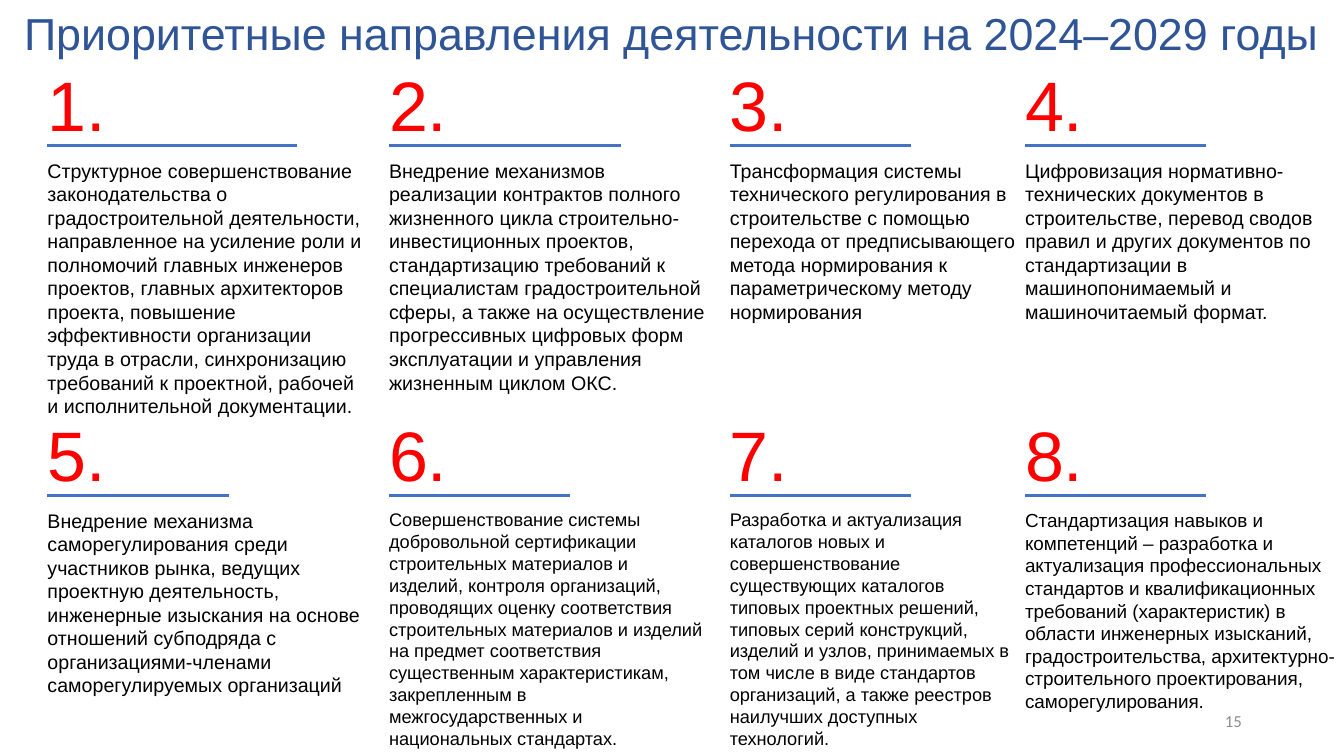
from pptx import Presentation
from pptx.dml.color import RGBColor as RGB
from pptx.enum.shapes import MSO_CONNECTOR as Connector
from pptx.enum.text import MSO_ANCHOR as Anchor, PP_ALIGN as Align
from pptx.oxml.ns import qn
from pptx.util import Pt
from lxml.etree import SubElement
from dataclasses import dataclass

TITLE = "Приоритетные направления деятельности на 2024–2029 годы"
PAGE_NUMBER = "15"
PRIORITIES = [
    {"text": "Структурное совершенствование законодательства о градостроительной деятельности, "
             "направленное на усиление роли и полномочий главных инженеров проектов, главных "
             "архитекторов проекта, повышение эффективности организации труда в отрасли, "
             "синхронизацию требований к проектной, рабочей и исполнительной документации.",
     "rule": 178.5},
    {"text": "Внедрение механизмов реализации контрактов полного жизненного цикла "
             "строительно-инвестиционных проектов, стандартизацию требований к специалистам "
             "градостроительной сферы, а также на осуществление прогрессивных цифровых форм "
             "эксплуатации и управления жизненным циклом ОКС.",
     "rule": 165.5},
    {"text": "Трансформация системы технического регулирования в строительстве с помощью "
             "перехода от предписывающего метода нормирования к параметрическому методу "
             "нормирования"},
    {"text": "Цифровизация нормативно-технических документов в строительстве, перевод сводов "
             "правил и других документов по стандартизации в машинопонимаемый и "
             "машиночитаемый формат."},
    {"text": "Внедрение механизма саморегулирования среди участников рынка, ведущих проектную "
             "деятельность, инженерные изыскания на основе отношений субподряда с "
             "организациями-членами саморегулируемых организаций"},
    {"text": "Совершенствование системы добровольной сертификации строительных материалов и "
             "изделий, контроля организаций, проводящих оценку соответствия строительных "
             "материалов и изделий на предмет соответствия существенным характеристикам, "
             "закрепленным в межгосударственных и национальных стандартах.",
     "size": 13},
    {"text": "Разработка и актуализация каталогов новых и совершенствование существующих "
             "каталогов типовых проектных решений, типовых серий конструкций, изделий и узлов, "
             "принимаемых в том числе в виде стандартов организаций, а также реестров "
             "наилучших доступных технологий.",
     "size": 13, "width": 201},
    {"text": "Стандартизация навыков и компетенций – разработка и актуализация "
             "профессиональных стандартов и квалификационных требований (характеристик) в "
             "области инженерных изысканий, градостроительства, архитектурно-строительного "
             "проектирования, саморегулирования.",
     "size": 13.5},
]


@dataclass(frozen=True)
class Theme:
    title: RGB = RGB(0x2F, 0x55, 0x97)
    numeral: RGB = RGB(0xFF, 0, 0)
    body: RGB = RGB(0, 0, 0)
    rule: RGB = RGB(0x44, 0x72, 0xC4)
    page: RGB = RGB(0x8C, 0x8C, 0x8C)
    title_size: float = 32
    numeral_size: float = 50
    body_size: float = 14
    page_size: float = 12
    rule_weight: float = 1.75
    font: str = "Arial"
    page_font: str = "Calibri"


THEME = Theme()
COLUMN_LEFTS = [33.9, 277.9, 521.3, 732.2]
ROW_TOPS = [55.4, 305.3]
NUMERAL_WIDTH, NUMERAL_HEIGHT = 86.4, 48.8
RULE_OFFSET, RULE_LENGTH = 48.5, 129.4
BODY_OFFSET, BODY_WIDTH, BODY_HEIGHT = 57.9, 226.8, 97.2


def add_text(slide, text, box, size, color, font=THEME.font, inset=(0, 0), anchor=Anchor.TOP):
    frame = slide.shapes.add_textbox(*map(Pt, box)).text_frame
    frame.word_wrap = True
    frame.vertical_anchor = anchor
    frame.margin_left = frame.margin_right = Pt(inset[0])
    frame.margin_top = frame.margin_bottom = Pt(inset[1])
    paragraph = frame.paragraphs[0]
    run = paragraph.add_run()
    run.text = text
    run.font.size = Pt(size)
    run.font.name = font
    run.font.color.rgb = color
    return paragraph


def add_rule(slide, left, top, length):
    rule = slide.shapes.add_connector(Connector.STRAIGHT, Pt(left), Pt(top), Pt(left + length), Pt(top))
    rule.line.color.rgb = THEME.rule
    rule.line.width = Pt(THEME.rule_weight)
    SubElement(rule._element.spPr, qn("a:effectLst"))


def add_priority(slide, index, priority):
    row, column = divmod(index, len(COLUMN_LEFTS))
    left, top = COLUMN_LEFTS[column], ROW_TOPS[row]
    add_text(slide, f"{index + 1}.", (left, top, NUMERAL_WIDTH, NUMERAL_HEIGHT),
             THEME.numeral_size, THEME.numeral, anchor=Anchor.BOTTOM)
    add_rule(slide, left, top + RULE_OFFSET, priority.get("rule", RULE_LENGTH))
    add_text(slide, priority["text"],
             (left, top + BODY_OFFSET, priority.get("width", BODY_WIDTH), BODY_HEIGHT),
             priority.get("size", THEME.body_size), THEME.body)


def main():
    deck = Presentation()
    deck.slide_width, deck.slide_height = Pt(960), Pt(540)
    slide = deck.slides.add_slide(deck.slide_layouts[6])

    heading = add_text(slide, TITLE, (5.8, 5, 948.2, 43.2), THEME.title_size, THEME.title,
                       inset=(7.2, 3.6))
    heading.alignment = Align.CENTER
    heading.line_spacing = Pt(34)
    heading.space_before = Pt(10)

    for index, priority in enumerate(PRIORITIES):
        add_priority(slide, index, priority)

    page = add_text(slide, PAGE_NUMBER, (678.2, 500.4, 216, 28.8), THEME.page_size, THEME.page,
                    font=THEME.page_font, inset=(7.2, 3.6), anchor=Anchor.MIDDLE)
    page.alignment = Align.RIGHT
    deck.save("out.pptx")


if __name__ == "__main__":
    main()
